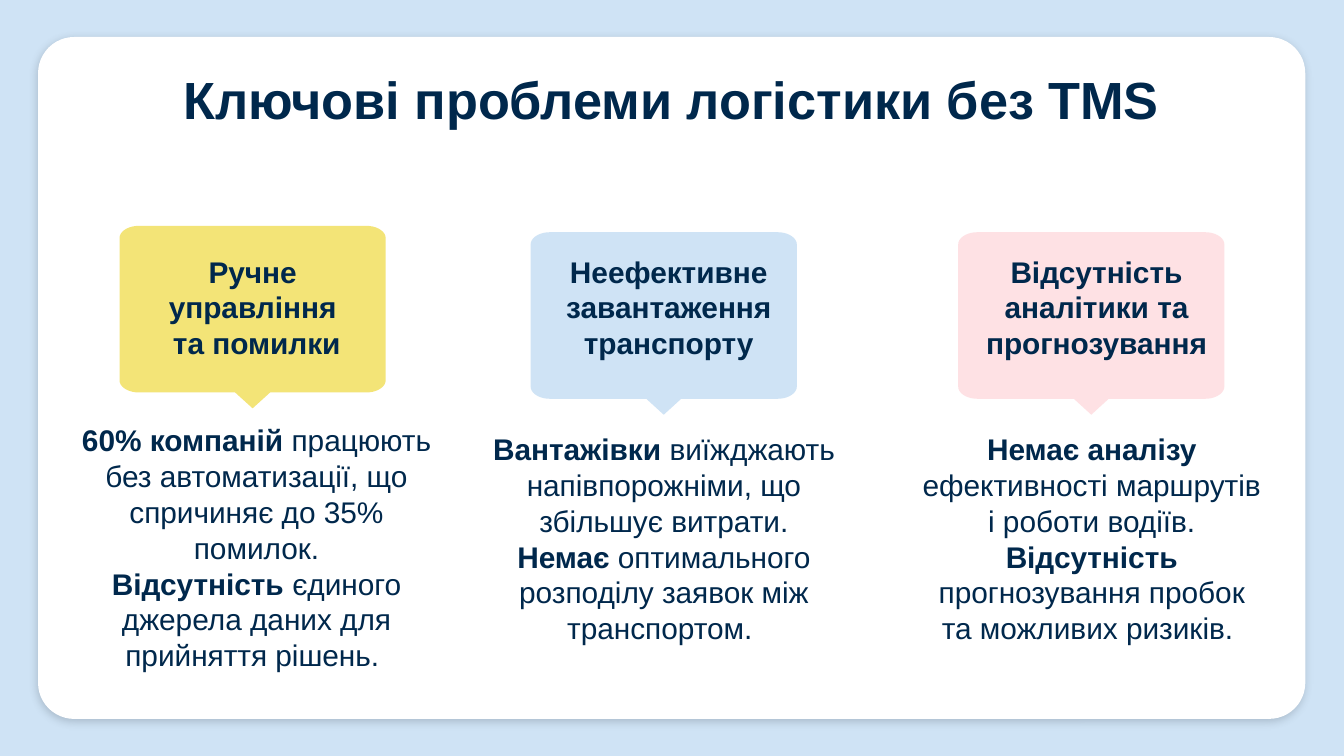
from math import cos, radians, sin

from lxml import etree
from pptx import Presentation
from pptx.dml.color import RGBColor
from pptx.enum import shapes, text
from pptx.oxml import ns
from pptx.util import Cm, Pt

NAVY = RGBColor(0x00, 0x28, 0x4C)
WHITE = RGBColor(0xFF, 0xFF, 0xFF)
BLUE = RGBColor(0xCF, 0xE3, 0xF5)
YELLOW = RGBColor(0xF3, 0xE4, 0x77)
PINK = RGBColor(0xFE, 0xE1, 0xE4)
SHADOW = RGBColor(0x26, 0x30, 0x3A)

COLUMNS = [
    dict(
        color=YELLOW, callout=(2.26, 4.27),
        head_box=(1.73, 3.89, 6.25, 3.18), body_box=(1.27, 7.82, 7.16, 5.05),
        head=["Ручне ", "управління ", "та помилки"],
        body=[("60% компаній ", "працюють без автоматизації, що спричиняє до 35% помилок."),
              ("Відсутність ", "єдиного джерела даних для прийняття рішень. ")],
    ),
    dict(
        color=BLUE, callout=(10.03, 4.39),
        head_box=(9.07, 3.89, 7.14, 3.18), body_box=(8.56, 7.65, 7.98, 5.05),
        head=["Неефективне завантаження транспорту"],
        body=[("Вантажівки ", "виїжджають напівпорожніми, що збільшує витрати."),
              ("Немає", " оптимального розподілу заявок між транспортом. ")],
    ),
    dict(
        color=PINK, callout=(18.11, 4.39),
        head_box=(17.6, 3.89, 6.25, 3.18), body_box=(17.17, 7.65, 6.93, 5.05),
        head=["Відсутність аналітики та прогнозування"],
        body=[("Немає аналізу ", "ефективності маршрутів і роботи водіїв."),
              ("Відсутність ", "прогнозування пробок та можливих ризиків. ")],
    ),
]


class ProblemSlide:
    font = "Arial"
    text_size = 16
    title_size = 28

    def __init__(self, prs):
        self.s = prs.slides.add_slide(prs.slide_layouts[5])
        self.fill(self.s.background, BLUE)

    def fill(self, target, color):
        target.fill.solid()
        target.fill.fore_color.rgb = color

    def set_text(self, tf, paragraphs, size, anchor, pad=0.25):
        tf.word_wrap = True
        tf.auto_size = text.MSO_AUTO_SIZE.NONE
        tf.vertical_anchor = anchor
        tf.margin_left = tf.margin_right = Cm(0.25)
        tf.margin_top = tf.margin_bottom = Cm(pad)
        for i, runs in enumerate(paragraphs):
            p = tf.add_paragraph() if i else tf.paragraphs[0]
            p.alignment = text.PP_ALIGN.CENTER
            for j, words in enumerate(runs):
                r = p.add_run()
                r.text = words
                r.font.name = self.font
                r.font.size = Pt(size)
                r.font.bold = j == 0
                r.font.color.rgb = NAVY

    def card(self, left, top, width, height):
        sp = self.s.shapes.add_shape(shapes.MSO_SHAPE.ROUNDED_RECTANGLE,
                                     Cm(left), Cm(top), Cm(width), Cm(height))
        sp.adjustments[0] = 0.053
        self.fill(sp, WHITE)
        sp.line.fill.background()
        sp.shadow.inherit = False
        effects = sp._element.spPr.find(ns.qn("a:effectLst"))
        shadow = etree.SubElement(effects, ns.qn("a:outerShdw"), blurRad=str(Pt(4.5)),
                                  dist=str(Pt(1.5)), dir="5400000", rotWithShape="0")
        color = etree.SubElement(shadow, ns.qn("a:srgbClr"), val=str(SHADOW))
        etree.SubElement(color, ns.qn("a:alpha"), val="21000")
        self.s.shapes._spTree.insert(2, sp._element)

    def title(self, words, left, top, width, height):
        sp = self.s.shapes.title
        sp.left, sp.top, sp.width, sp.height = map(Cm, (left, top, width, height))
        self.set_text(sp.text_frame, [[words]], self.title_size, text.MSO_ANCHOR.TOP)

    def callout(self, left, top, color, width=5.03, height=3.15, tip=0.3, half=0.33):
        rx, ry = 0.37, 0.23
        right, bottom, middle = left + width, top + height, left + width / 2
        corners = [(right - rx, top + ry, -90), (right - rx, bottom - ry, 0),
                   (left + rx, bottom - ry, 90), (left + rx, top + ry, 180)]
        arcs = [[(x + rx * cos(radians(a)), y + ry * sin(radians(a)))
                 for a in range(start, start + 91, 10)] for x, y, start in corners]
        pointer = [(middle + half, bottom), (middle, bottom + tip), (middle - half, bottom)]
        points = [(Cm(x), Cm(y)) for x, y in arcs[0] + arcs[1] + pointer + arcs[2] + arcs[3]]
        builder = self.s.shapes.build_freeform(*points[0])
        builder.add_line_segments(points[1:], close=True)
        sp = builder.convert_to_shape()
        self.fill(sp, color)
        sp.line.fill.background()
        sp.shadow.inherit = False

    def text_box(self, paragraphs, box, anchor, pad):
        sp = self.s.shapes.add_textbox(*map(Cm, box))
        self.set_text(sp.text_frame, paragraphs, self.text_size, anchor, pad)

    def column(self, color, callout, head_box, body_box, head, body):
        self.callout(*callout, color)
        self.text_box([[line] for line in head], head_box, text.MSO_ANCHOR.BOTTOM, 0.25)
        self.text_box(body, body_box, text.MSO_ANCHOR.MIDDLE, 0.13)


def main():
    prs = Presentation()
    prs.slide_width, prs.slide_height = Cm(25.4), Cm(14.29)
    slide = ProblemSlide(prs)
    slide.card(0.72, 0.7, 23.95, 12.89)
    slide.title("Ключові проблеми логістики без TMS", 0.61, 1.02, 24.16, 1.96)
    for column in COLUMNS:
        slide.column(**column)
    prs.save("out.pptx")


if __name__ == "__main__":
    main()
